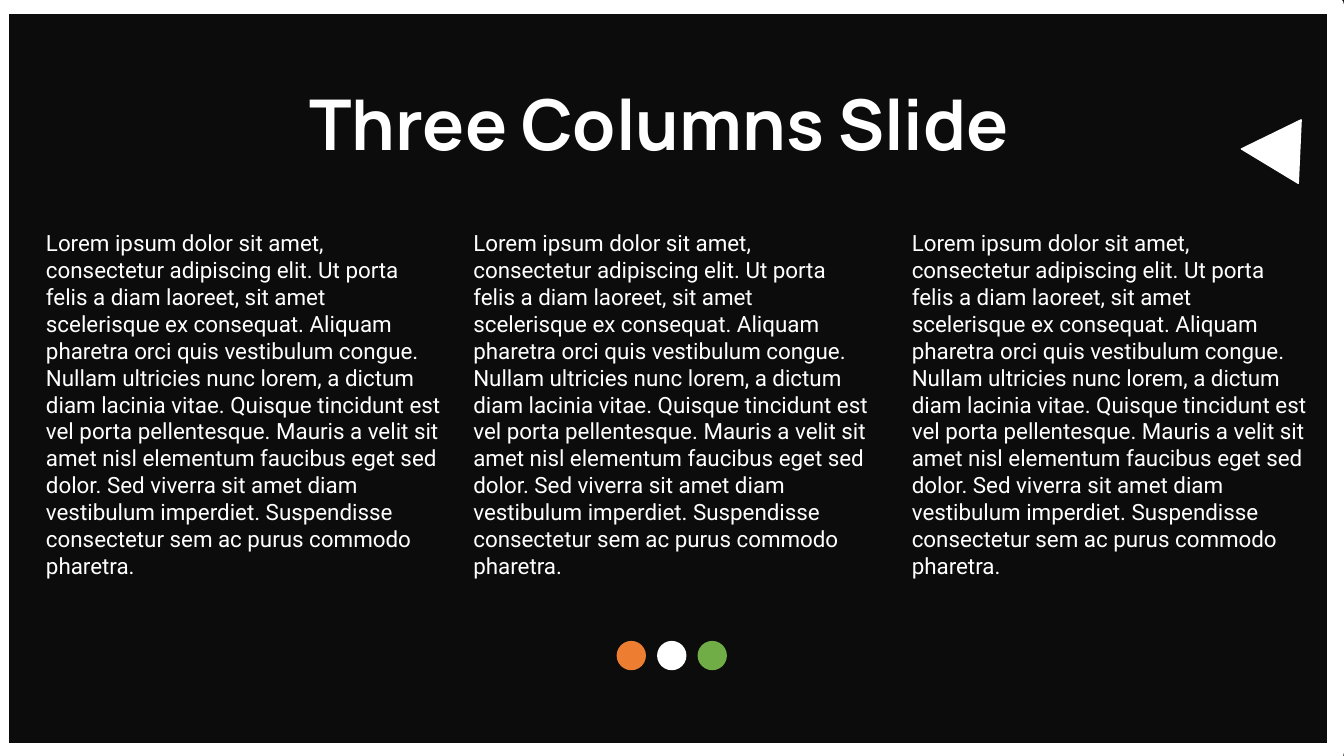
from pptx import Presentation
from pptx.dml.color import RGBColor
from pptx.enum.shapes import MSO_SHAPE
from pptx.enum.text import MSO_ANCHOR, MSO_AUTO_SIZE, PP_ALIGN
from pptx.util import Cm, Pt

RECTANGLE = MSO_SHAPE.RECTANGLE
TRIANGLE = MSO_SHAPE.ISOSCELES_TRIANGLE
CIRCLE = MSO_SHAPE.OVAL
TOP, MIDDLE = MSO_ANCHOR.TOP, MSO_ANCHOR.MIDDLE
LEFT, CENTER = PP_ALIGN.LEFT, PP_ALIGN.CENTER
NO_AUTOFIT = MSO_AUTO_SIZE.NONE

BLACK, WHITE, ORANGE, GREEN = "0C0C0C", "FFFFFF", "ED7D31", "70AD47"
TITLE_FONT, BODY_FONT = "Manrope", "Roboto"
TITLE_ONLY_LAYOUT = 5

COLUMN_LEFTS = (0.91, 11.68, 22.73)
COLUMN_TEXT = (
    "Lorem ipsum dolor sit amet, consectetur adipiscing elit. Ut porta felis a "
    "diam laoreet, sit amet scelerisque ex consequat. Aliquam pharetra orci quis "
    "vestibulum congue. Nullam ultricies nunc lorem, a dictum diam lacinia vitae. "
    "Quisque tincidunt est vel porta pellentesque. Mauris a velit sit amet nisl "
    "elementum faucibus eget sed dolor. Sed viverra sit amet diam vestibulum "
    "imperdiet. Suspendisse consectetur sem ac purus commodo pharetra."
)

DOT_COLOURS = (ORANGE, WHITE, GREEN)
DOT_LEFT, DOT_TOP, DOT_SIZE, DOT_STEP = 15.54, 16.15, 0.74, 1.02


def colour(hex_code):
    return RGBColor.from_string(hex_code)


def write(frame, text, font, size, bold=False, align=LEFT, anchor=TOP):
    frame.text = text
    frame.word_wrap = True
    frame.auto_size = NO_AUTOFIT
    frame.vertical_anchor = anchor
    paragraph = frame.paragraphs[0]
    paragraph.alignment = align
    paragraph.line_spacing = 1.0
    for run in paragraph.runs:
        run.font.name = font
        run.font.size = Pt(size)
        run.font.bold = bold
        run.font.color.rgb = colour(WHITE)


def set_title(slide, text):
    title = slide.shapes.title
    title.left, title.top = Cm(0.91), Cm(1.88)
    title.width, title.height = Cm(31.42), Cm(2.39)
    write(title.text_frame, text, TITLE_FONT, 50, True, CENTER, MIDDLE)


def add_column(slide, left):
    column = slide.shapes.add_textbox(Cm(left), Cm(5.66), Cm(10.49), Cm(8.46))
    write(column.text_frame, COLUMN_TEXT, BODY_FONT, 16)


def add_figure(slide, kind, box, fill=None, line=None, line_width=1):
    figure = slide.shapes.add_shape(kind, *(Cm(length) for length in box))
    figure.shadow.inherit = False
    if fill:
        figure.fill.solid()
        figure.fill.fore_color.rgb = colour(fill)
    else:
        figure.fill.background()
    if line:
        figure.line.color.rgb = colour(line)
        figure.line.width = Pt(line_width)
    else:
        figure.line.fill.background()
    return figure


def main():
    deck = Presentation()
    deck.slide_width, deck.slide_height = Cm(33.87), Cm(19.05)
    slide = deck.slides.add_slide(deck.slide_layouts[TITLE_ONLY_LAYOUT])
    slide.background.fill.solid()
    slide.background.fill.fore_color.rgb = colour(BLACK)

    add_figure(slide, RECTANGLE, (0, 0.13, 33.66, 18.82), line=WHITE, line_width=12.25)
    set_title(slide, "Three Columns Slide")
    for left in COLUMN_LEFTS:
        add_column(slide, left)

    pointer = add_figure(slide, TRIANGLE, (31.22, 3.05, 1.6, 1.47), WHITE, WHITE)
    pointer.rotation = 272.6
    for index, dot_colour in enumerate(DOT_COLOURS):
        dot_box = (DOT_LEFT + index * DOT_STEP, DOT_TOP, DOT_SIZE, DOT_SIZE)
        add_figure(slide, CIRCLE, dot_box, dot_colour)

    deck.save("out.pptx")


if __name__ == "__main__":
    main()
